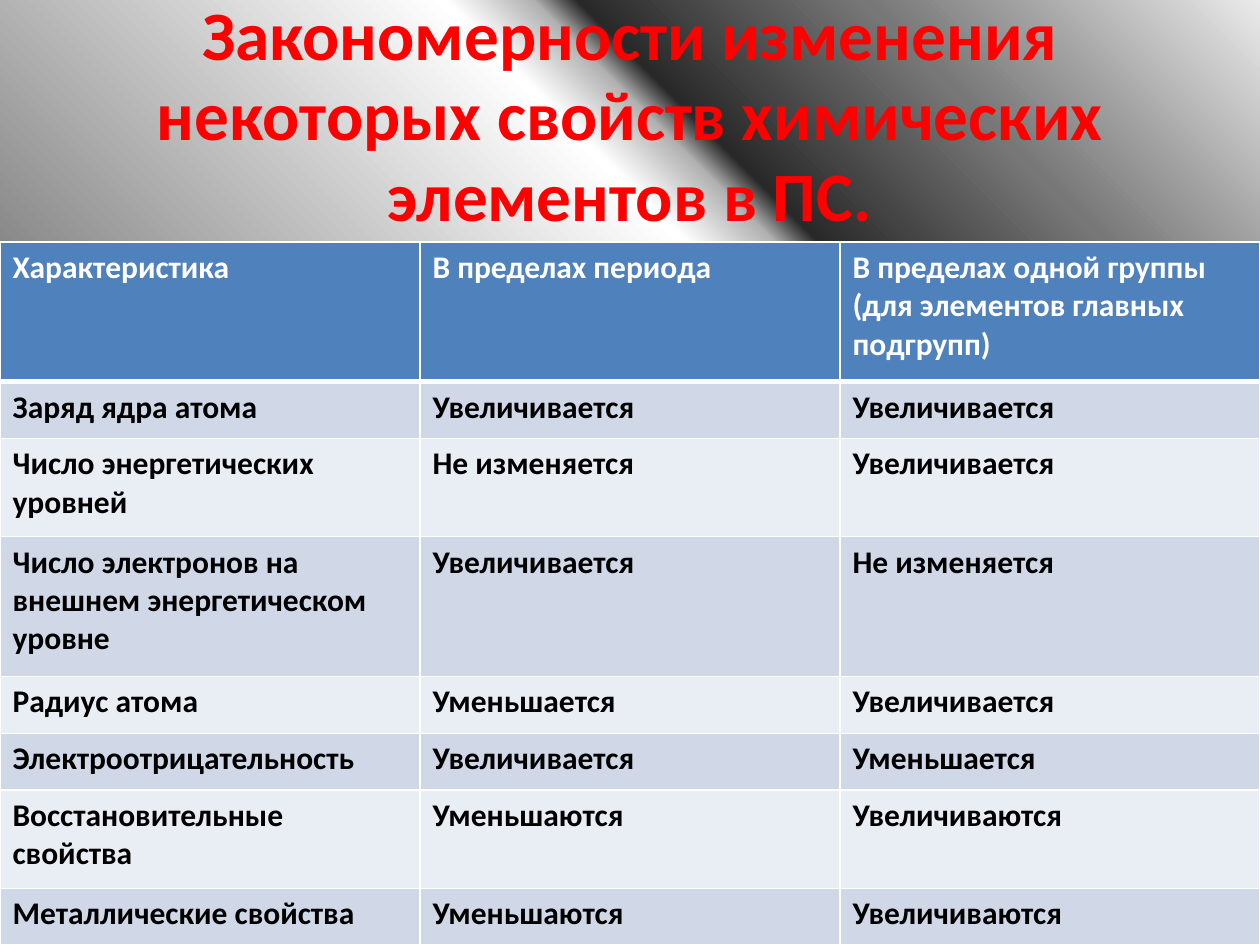
from lxml import etree
from pptx import Presentation, util as u
from pptx.dml.color import RGBColor
from pptx.enum import text
from pptx.oxml import parse_xml
from pptx.oxml.ns import nsdecls, qn

FONT = "Calibri"
WHITE, BLACK, RED = "FFFFFF", "000000", "FF0000"
HEADER, BANDS = "4F81BD", ("D0D8E8", "E9EDF4")
TITLE = "Закономерности изменения некоторых свойств химических элементов в ПС."
UP, DOWN, SAME = "Увеличивается", "Уменьшается", "Не изменяется"
UP_PLURAL, DOWN_PLURAL = "Увеличиваются", "Уменьшаются"
ROWS = [
    ("Характеристика", "В пределах периода",
     "В пределах одной группы (для элементов главных подгрупп)"),
    ("Заряд ядра атома", UP, UP),
    ("Число энергетических уровней", SAME, UP),
    ("Число электронов на внешнем энергетическом уровне", UP, SAME),
    ("Радиус атома", DOWN, UP),
    ("Электроотрицательность", UP, DOWN),
    ("Восстановительные свойства", DOWN_PLURAL, UP_PLURAL),
    ("Металлические свойства", DOWN_PLURAL, UP_PLURAL),
]
LINES_PER_ROW = (3, 1, 2, 3, 1, 1, 2, 1)
HEIGHT_FOR_LINES = {1: 0.45, 2: 0.78, 3: 1.11}
# position %, colour, opacity %
STOPS = [(13, "5F5F5F", 100), (16, "CBCBCB", 59), (21, "5F5F5F", 100),
         (63, "FFFFFF", 100), (67, "B2B2B2", 100), (69, "292929", 100),
         (82, "777777", 100), (100, "EAEAEA", 100)]


def color(value):
    return RGBColor.from_string(value)


def set_background(s):
    """Circular gradient spreading from the bottom left corner."""
    stops = "".join(
        f'<a:gs pos="{pos * 1000}"><a:srgbClr val="{c}">'
        f'<a:alpha val="{alpha * 1000}"/></a:srgbClr></a:gs>'
        for pos, c, alpha in STOPS)
    s.element.cSld.insert(0, parse_xml(
        f'<p:bg {nsdecls("p", "a")}><p:bgPr><a:gradFill rotWithShape="1">'
        f'<a:gsLst>{stops}</a:gsLst><a:path path="circle">'
        '<a:fillToRect t="100000" r="100000"/></a:path></a:gradFill>'
        '<a:effectLst/></p:bgPr></p:bg>'))


def write(tf, words, size, c):
    tf.text = words
    p = tf.paragraphs[0]
    font = p.runs[0].font
    font.name, font.size, font.bold = FONT, u.Pt(size), True
    font.color.rgb = color(c)
    return p


def add_title(s, width, height):
    box = s.shapes.add_textbox(int(width * 0.05), int(height * 0.04),
                               int(width * 0.9), u.Inches(1.25))
    tf = box.text_frame
    tf.word_wrap = True
    tf.vertical_anchor = text.MSO_ANCHOR.MIDDLE
    p = write(tf, TITLE, 39.6, RED)
    p.alignment = text.PP_ALIGN.CENTER
    p.line_spacing = 0.97


def set_borders(cell, bottom):
    tcPr = cell._tc.get_or_add_tcPr()
    widths = {"lnL": 1, "lnR": 1, "lnT": 1, "lnB": bottom}
    for i, (side, points) in enumerate(widths.items()):
        ln = etree.Element(qn(f"a:{side}"), w=str(u.Pt(points)))
        fill = etree.SubElement(ln, qn("a:solidFill"))
        etree.SubElement(fill, qn("a:srgbClr"), val=WHITE)
        tcPr.insert(i, ln)


def add_properties_table(s, width, height):
    heights = [u.Inches(HEIGHT_FOR_LINES[n]) for n in LINES_PER_ROW]
    total = sum(heights)
    table = s.shapes.add_table(len(ROWS), len(ROWS[0]), 0, height - total,
                               width, total).table
    for i, (row, row_height) in enumerate(zip(ROWS, heights)):
        table.rows[i].height = row_height
        is_header = i == 0
        for j, words in enumerate(row):
            cell = table.cell(i, j)
            write(cell.text_frame, words, 18, WHITE if is_header else BLACK)
            cell.fill.solid()
            cell.fill.fore_color.rgb = color(
                HEADER if is_header else BANDS[(i - 1) % 2])
            set_borders(cell, 3 if is_header else 1)


def main():
    prs = Presentation()
    prs.slide_width, prs.slide_height = u.Inches(10), u.Inches(7.5)
    s = prs.slides.add_slide(prs.slide_layouts[6])
    set_background(s)
    add_title(s, prs.slide_width, prs.slide_height)
    add_properties_table(s, prs.slide_width, prs.slide_height)
    prs.save("out.pptx")


if __name__ == "__main__":
    main()
